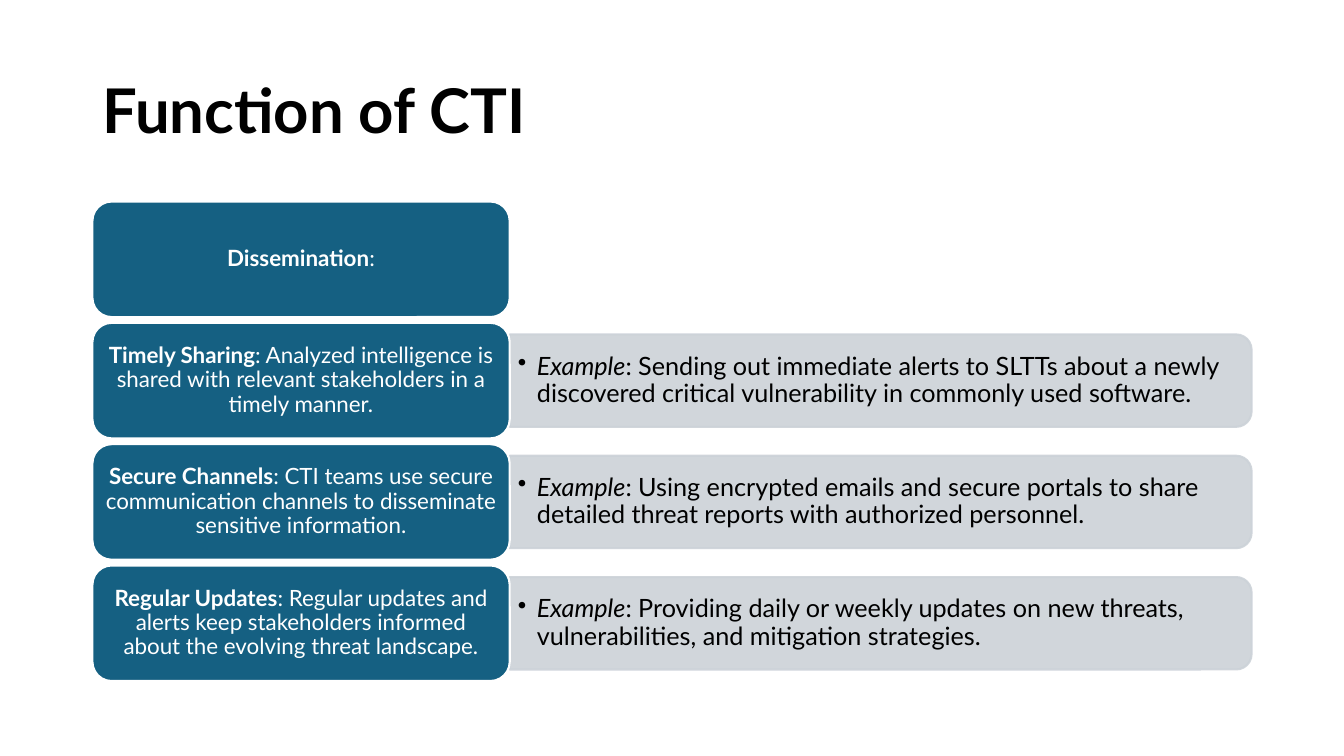
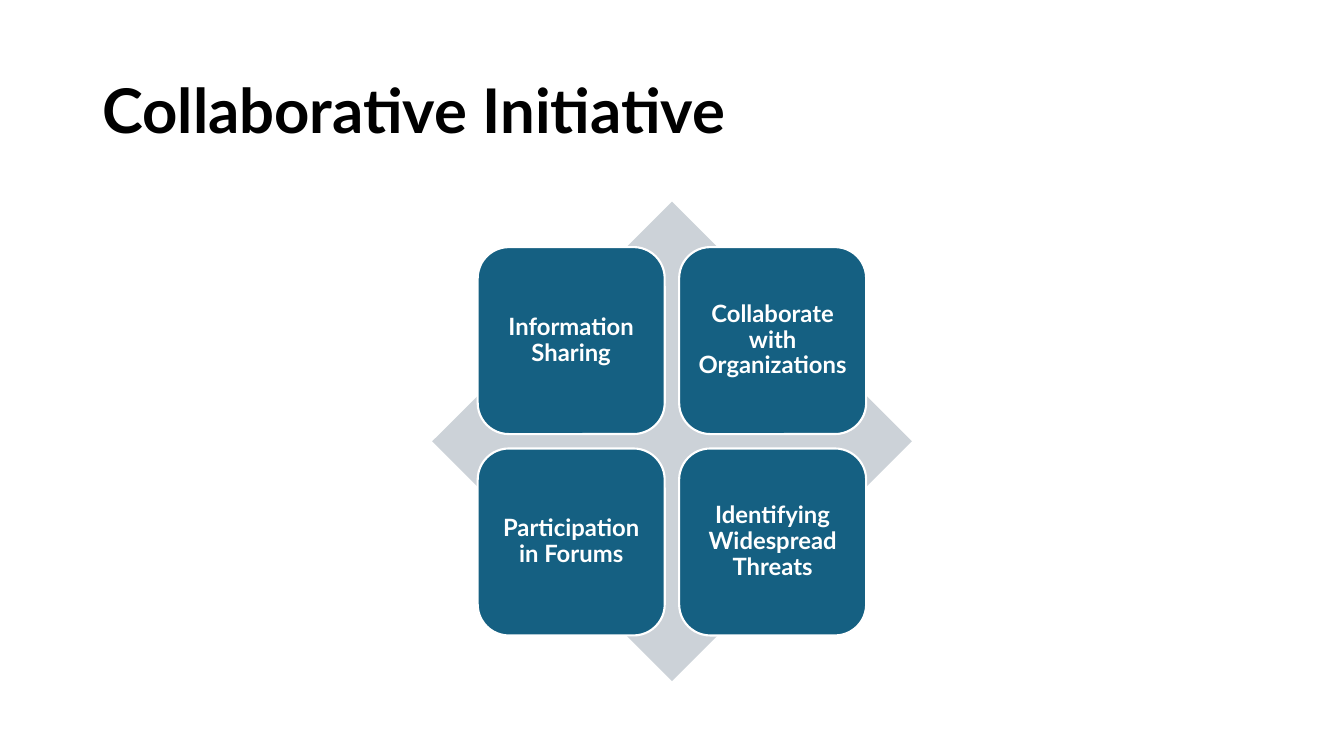
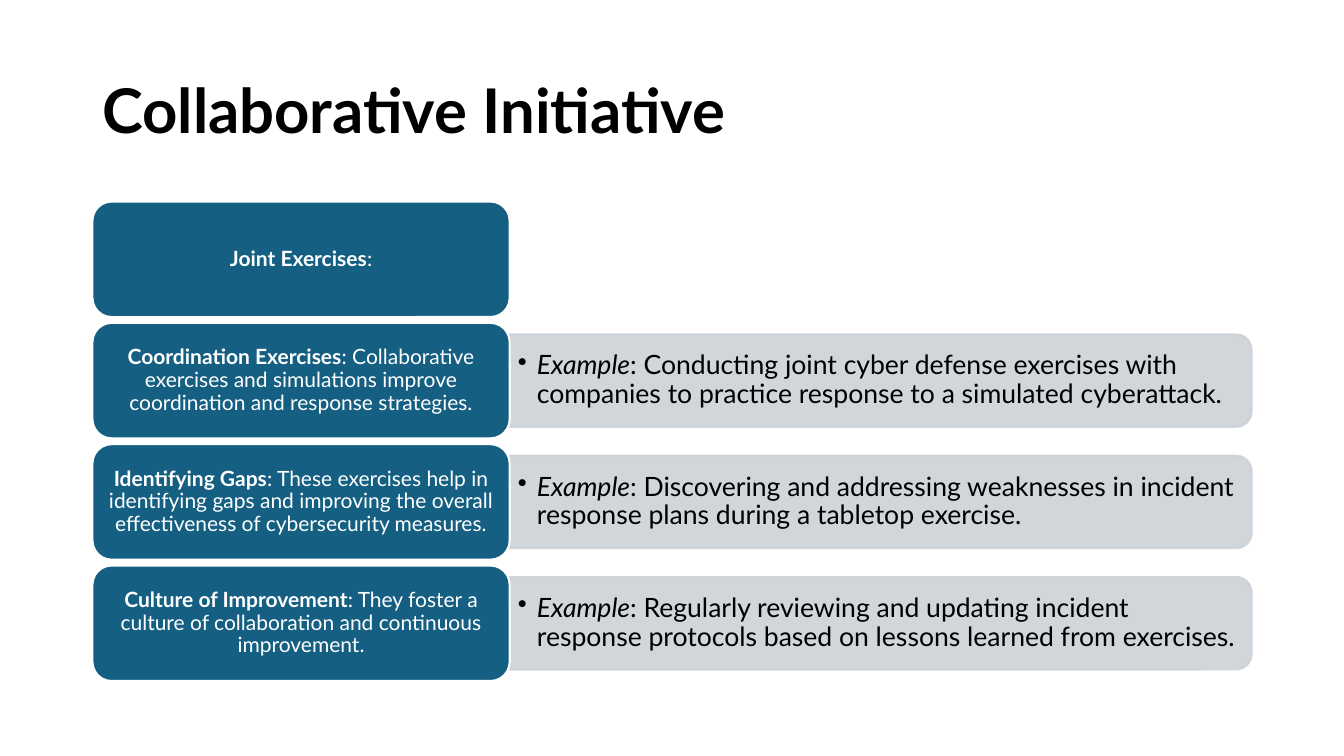
"""Build three slides on cyber threat intelligence: two example lists and a diamond of four cards."""
from lxml.etree import SubElement
from pptx import Presentation
from pptx.dml.color import RGBColor
from pptx.enum.shapes import MSO_SHAPE as Shape
from pptx.enum.text import MSO_ANCHOR as Anchor, PP_ALIGN as Align
from pptx.oxml.ns import qn
from pptx.util import Inches, Pt

COLORS = {"blue": "156082", "grey": "CCD2D8", "white": "FFFFFF", "black": "000000"}
FONT = "Lato"

deck = Presentation()
deck.slide_width, deck.slide_height = Inches(13.33), Inches(7.5)
unit = deck.slide_width / 160
left, content_width = 11 * unit, 138 * unit
top, content_height = 24 * unit, 57.1 * unit

LISTS = {
    "Function of CTI": (16, 18, 0.07, [
        ("Dissemination", ":", None),
        ("Timely Sharing",
         ": Analyzed intelligence is shared with relevant stakeholders in a timely manner.",
         ": Sending out immediate alerts to SLTTs about a newly discovered critical "
         "vulnerability in commonly used software."),
        ("Secure Channels",
         ": CTI teams use secure communication channels to disseminate sensitive information.",
         ": Using encrypted emails and secure portals to share detailed threat reports "
         "with authorized personnel."),
        ("Regular Updates",
         ": Regular updates and alerts keep stakeholders informed about the evolving "
         "threat landscape.",
         ": Providing daily or weekly updates on new threats, vulnerabilities, and "
         "mitigation strategies."),
    ]),
    "Collaborative Initiative": (15, 19, 0.06, [
        ("Joint Exercises", ":", None),
        ("Coordination Exercises",
         ": Collaborative exercises and simulations improve coordination and response "
         "strategies.",
         ": Conducting joint cyber defense exercises with companies to practice response "
         "to a simulated cyberattack."),
        ("Identifying Gaps",
         ": These exercises help in identifying gaps and improving the overall "
         "effectiveness of cybersecurity measures.",
         ": Discovering and addressing weaknesses in incident response plans during a "
         "tabletop exercise."),
        ("Culture of Improvement",
         ": They foster a culture of collaboration and continuous improvement.",
         ": Regularly reviewing and updating incident response protocols based on lessons "
         "learned from exercises."),
    ]),
}
CARDS = ["Information Sharing", "Collaborate with Organizations",
         "Participation in Forums", "Identifying Widespread Threats"]


def add_panel(page, kind, x, y, width, height, fill, line=None):
    panel = page.shapes.add_shape(kind, round(x), round(y), round(width), round(height))
    panel.shadow.inherit = False
    panel.fill.solid()
    panel.fill.fore_color.rgb = RGBColor.from_string(COLORS[fill])
    if line:
        panel.line.color.rgb = RGBColor.from_string(COLORS[line])
        panel.line.width = Pt(1.5)
    else:
        panel.line.fill.background()
    return panel


def write(box, spans, size, color, align, side, edge, bullet=False):
    frame = box.text_frame
    frame.word_wrap = True
    frame.vertical_anchor = Anchor.MIDDLE
    frame.margin_left = frame.margin_right = Inches(side)
    frame.margin_top = frame.margin_bottom = Inches(edge)
    para = frame.paragraphs[0]
    para.alignment = align
    para.line_spacing = 0.9
    if bullet:
        properties = para._p.get_or_add_pPr()
        properties.set("marL", str(Inches(0.19)))
        properties.set("indent", str(-Inches(0.19)))
        SubElement(properties, qn("a:buChar")).set("char", "•")
    para.font.name = FONT
    para.font.size = Pt(size)
    para.font.color.rgb = RGBColor.from_string(COLORS[color])
    for text, style in spans:
        span = para.add_run()
        span.text = text
        span.font.bold = style == "bold"
        span.font.italic = style == "italic"


pages = []
for title in ["Function of CTI", "Collaborative Initiative", "Collaborative Initiative"]:
    page = deck.slides.add_slide(deck.slide_layouts[6])
    title_box = page.shapes.add_textbox(
        round(left), round(4.8 * unit), round(content_width), round(17.4 * unit))
    write(title_box, [(title, "bold")], 44, "black", Align.LEFT, 0.1, 0.05)
    pages.append(page)

label_width = 0.36 * content_width
bar_left, bar_width = left + label_width, content_width - label_width
row_height = content_height / (4 + 3 * 0.05)
bar_height = 0.8 * row_height

for page, (label_size, example_size, side, rows) in zip(pages[::2], LISTS.values()):
    for index, (heading, detail, example) in enumerate(rows):
        row_top = top + index * 1.05 * row_height
        if example:
            bar_top = row_top + (row_height - bar_height) / 2
            bar = add_panel(page, Shape.ROUND_2_SAME_RECTANGLE,
                            bar_left + (bar_width - bar_height) / 2,
                            bar_top + (bar_height - bar_width) / 2,
                            bar_height, bar_width, "grey", "grey")
            bar.rotation = 90
            for tint in bar.element.spPr.iter(qn("a:srgbClr")):
                SubElement(tint, qn("a:alpha")).set("val", "90000")
            example_box = page.shapes.add_textbox(
                round(bar_left), round(bar_top), round(0.99 * bar_width), round(bar_height))
            write(example_box, [("Example", "italic"), (example, None)],
                  example_size, "black", Align.LEFT, 0.08, 0.04, bullet=True)
        label = add_panel(page, Shape.ROUNDED_RECTANGLE, left, row_top,
                          label_width, row_height, "blue", "white")
        write(label, [(heading, "bold"), (detail, None)],
              label_size, "white", Align.CENTER, side, 0.03)

page = pages[1]
diamond_left = left + (content_width - content_height) / 2
add_panel(page, Shape.DIAMOND, diamond_left, top, content_height, content_height, "grey")
card_size, card_inset, card_step = [share * content_height for share in (0.39, 0.095, 0.42)]
for index, name in enumerate(CARDS):
    row, column = divmod(index, 2)
    card = add_panel(page, Shape.ROUNDED_RECTANGLE,
                     diamond_left + card_inset + column * card_step,
                     top + card_inset + row * card_step,
                     card_size, card_size, "blue", "white")
    write(card, [(name, "bold")], 17, "white", Align.CENTER, 0.07, 0.07)

deck.save("out.pptx")
